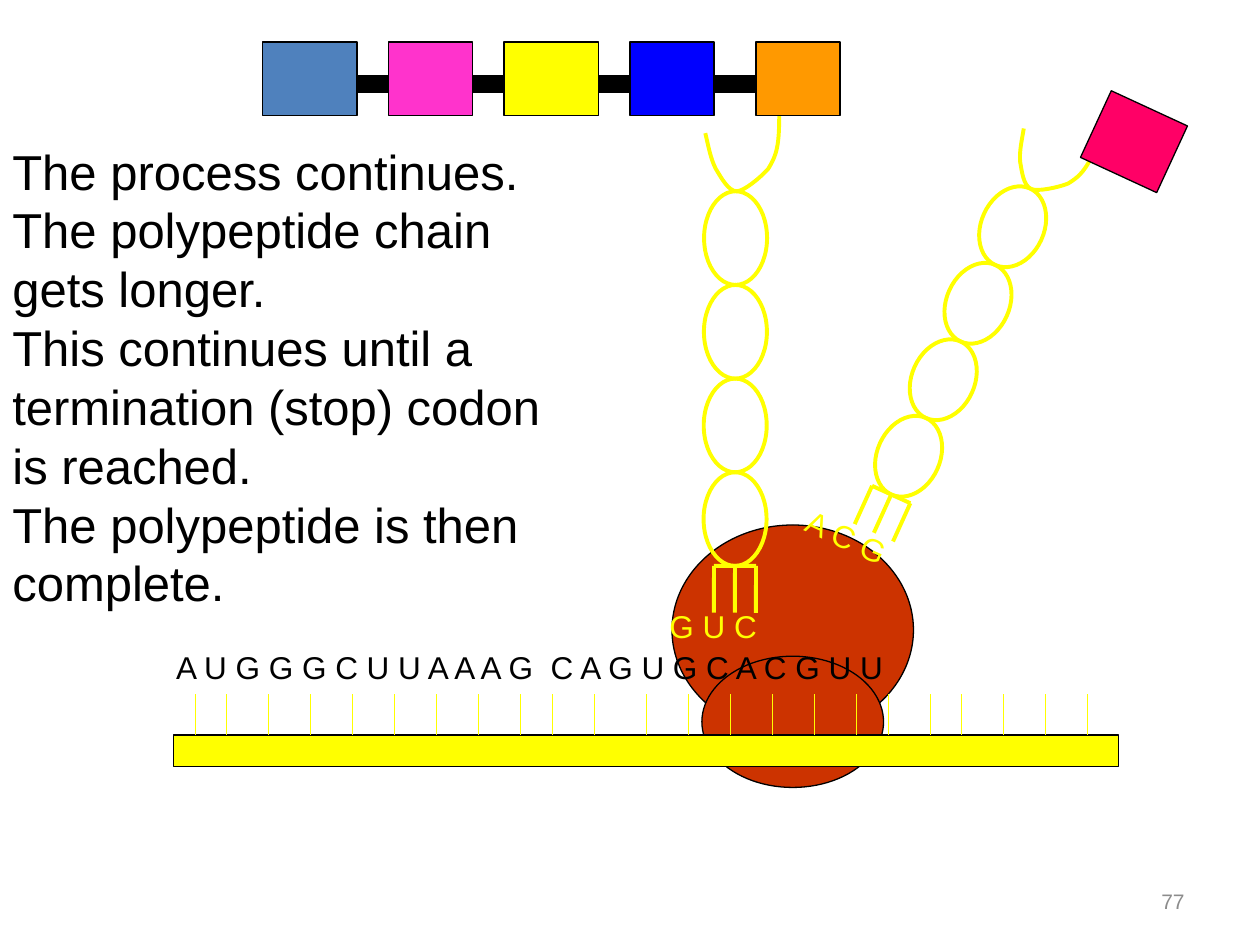
from dataclasses import dataclass
from itertools import accumulate
from math import cos, radians, sin

from lxml.etree import SubElement
from pptx import Presentation
from pptx.dml.color import RGBColor
from pptx.enum.shapes import MSO_CONNECTOR, MSO_SHAPE
from pptx.enum.text import MSO_ANCHOR, PP_ALIGN
from pptx.oxml.ns import qn
from pptx.util import Inches, Pt

COLUMNS, ROWS = 120, 90
CELL = Inches(10) / COLUMNS
COLORS = {
    "black": "000000", "yellow": "FFFF00", "ribosome": "CC3300",
    "steel": "4F81BD", "pink": "FF33CC", "blue": "0000FF",
    "orange": "FF9900", "rose": "FF0066", "grey": "8C8C8C",
}
# Control points of the fork: columns across, share of a loop height down
FORK = [
    (-2.9, -0.62), (-2.6, -0.48), (-2.4, -0.35), (-1.9, -0.24),
    (-1.4, -0.15), (-0.7, 0), (0.1, 0), (0.8, 0),
    (2.4, -0.15), (3.1, -0.24), (3.7, -0.35), (4, -0.43),
    (4.1, -0.62), (4.2, -0.81), (4.1, -1.25), (4.1, -1.37),
]
LOOP_COUNT, LOOP_WIDTH, PRONG_GAP = 4, 6, 2
TICK_GAPS = [3] + [4] * 7 + [3, 4, 5] + [4] * 5 + [3, 4, 3] + [4] * 3


@dataclass
class Area:
    """A rectangle in grid columns and rows."""
    left: float
    top: float
    width: float
    height: float

    def lengths(self) -> list[int]:
        return [grid(n) for n in (self.left, self.top, self.width, self.height)]


@dataclass
class Residue:
    left: float
    width: float
    color: str


@dataclass
class TransferRna:
    foot: tuple[float, float]
    tilt: float
    loop_height: float
    anticodon: str

    def point(self, across: float, down: float) -> tuple[float, float]:
        """Turn a place relative to the tilted foot into grid columns and rows."""
        turn = radians(self.tilt)
        return (self.foot[0] + across * cos(turn) - down * sin(turn),
                self.foot[1] + across * sin(turn) + down * cos(turn))

    def area(self, across: float, down: float, width: float, height: float) -> Area:
        """Give the unrotated area around a centre."""
        x, y = self.point(across, down)
        return Area(x - width / 2, y - height / 2, width, height)


def grid(cells: float) -> int:
    return round(cells * CELL)


def rgb(name: str) -> RGBColor:
    return RGBColor.from_string(COLORS[name])


def style(shape, fill: str | None, line: str, weight: float) -> None:
    shape.shadow.inherit = False
    if fill:
        shape.fill.solid()
        shape.fill.fore_color.rgb = rgb(fill)
    else:
        shape.fill.background()
    shape.line.color.rgb = rgb(line)
    shape.line.width = Pt(weight)


def draw_shape(page, kind, area: Area, fill: str | None,
               line: str = "black", weight: float = 0.75, tilt: float = 0) -> None:
    shape = page.shapes.add_shape(kind, *area.lengths())
    shape.rotation = tilt
    style(shape, fill, line, weight)


def draw_line(page, start, end, color: str, weight: float) -> None:
    line = page.shapes.add_connector(
        MSO_CONNECTOR.STRAIGHT, *(grid(n) for n in (*start, *end)))
    line.line.color.rgb = rgb(color)
    line.line.width = Pt(weight)
    SubElement(line._element.spPr, qn("a:effectLst"))


def draw_curve(page, points, color: str, weight: float) -> None:
    """Draw joined cubic curves; each takes three points after the first."""
    places = [(grid(x), grid(y)) for x, y in points]
    builder = page.shapes.build_freeform(*places[0])
    builder.add_line_segments(places[1:], close=False)
    shape = builder.convert_to_shape()
    style(shape, None, color, weight)
    track = next(shape._element.iter(qn("a:path")))
    steps = track.findall(qn("a:lnTo"))
    for first in range(0, len(steps), 3):
        curve = SubElement(track, qn("a:cubicBezTo"))
        for step in steps[first:first + 3]:
            curve.append(step[0])
            track.remove(step)


def draw_text(page, area: Area, lines: list[str], size: float, color: str = "black",
              tilt: float = 0, align=PP_ALIGN.LEFT, **frame_format) -> None:
    box = page.shapes.add_textbox(*area.lengths())
    box.rotation = tilt
    frame = box.text_frame
    for name, value in {"word_wrap": True, **frame_format}.items():
        setattr(frame, name, value)
    for index, line in enumerate(lines):
        para = frame.paragraphs[0] if index == 0 else frame.add_paragraph()
        para.alignment = align
        span = para.add_run()
        span.text = line
        for name, value in {"name": "Arial", "size": Pt(size)}.items():
            setattr(span.font, name, value)
        span.font.color.rgb = rgb(color)


def draw_messenger(page) -> None:
    draw_shape(page, MSO_SHAPE.RECTANGLE, Area(16.5, 70, 90, 3), "yellow")
    draw_text(page, Area(15.6, 61.1, 93, 6),
              ["A U G G G C U U A A A G  C A G U G C A C G U U"], 18)
    for column in accumulate(TICK_GAPS, initial=18.6):
        draw_line(page, (column, 66.1), (column, 70), "yellow", 0.75)


def draw_transfer_rna(page, rna: TransferRna) -> None:
    height = rna.loop_height
    head = -LOOP_COUNT * height
    draw_curve(page, [rna.point(across, head + share * height)
                      for across, share in FORK], "yellow", 2.25)
    draw_text(page, rna.area(-1.45, 0.75 * height, 17, 0.75 * height),
              [rna.anticodon], 18, "yellow", rna.tilt, margin_left=Inches(0.31))
    for index in range(LOOP_COUNT):
        draw_shape(page, MSO_SHAPE.OVAL,
                   rna.area(0, -(index + 0.5) * height, LOOP_WIDTH, height),
                   None, "yellow", 2.25, rna.tilt)
    for across in (-PRONG_GAP, 0, PRONG_GAP):
        draw_line(page, rna.point(across, 0), rna.point(across, height / 2),
                  "yellow", 2.25)
    draw_line(page, rna.point(-PRONG_GAP, 0), rna.point(PRONG_GAP, 0), "yellow", 2.25)


def draw_polypeptide(page, residues: list[Residue]) -> None:
    for before, after in zip(residues, residues[1:]):
        draw_line(page, (before.left + before.width, 8), (after.left, 8), "black", 10)
    for residue in residues:
        draw_shape(page, MSO_SHAPE.RECTANGLE,
                   Area(residue.left, 4, residue.width, 7), residue.color)


def main() -> None:
    deck = Presentation()
    deck.slide_width, deck.slide_height = grid(COLUMNS), grid(ROWS)
    page = deck.slides.add_slide(deck.slide_layouts[6])

    for subunit in (Area(64, 50, 23, 20), Area(66.85, 62.5, 17.3, 12.5)):
        draw_shape(page, MSO_SHAPE.OVAL, subunit, "ribosome")
    draw_messenger(page)
    draw_transfer_rna(page, TransferRna((70, 53.9), 0.1, 8.92, "G U C"))
    draw_polypeptide(page, [
        Residue(25, 9, "steel"), Residue(37, 8, "pink"), Residue(48, 9, "yellow"),
        Residue(60, 8, "blue"), Residue(72, 8, "orange"),
    ])
    draw_transfer_rna(page, TransferRna((84.88, 47.1), 24.4, 8, "A C G"))
    draw_shape(page, MSO_SHAPE.RECTANGLE, Area(104, 10, 8, 7), "rose", tilt=24.8)

    draw_text(page, Area(0, 12.85, 56, 46.4), [
        "The process continues.",
        "The polypeptide chain gets longer.",
        "This continues until a termination (stop) codon is reached.",
        "The polypeptide is then complete.",
    ], 28)
    draw_text(page, Area(86, 83.4, 28, 4.8), ["77"], 12, "grey",
              align=PP_ALIGN.RIGHT, vertical_anchor=MSO_ANCHOR.MIDDLE)
    deck.save("out.pptx")


if __name__ == "__main__":
    main()
